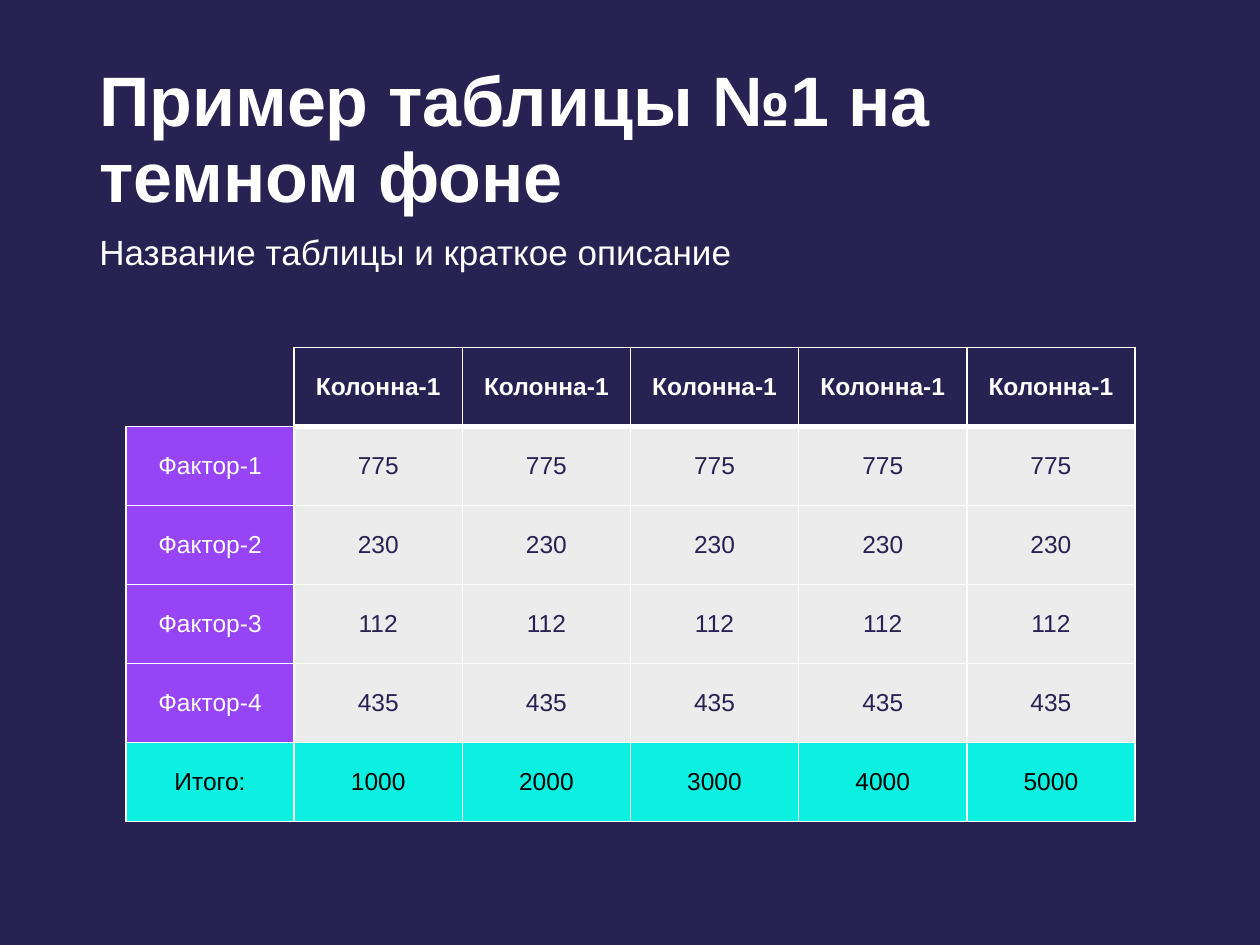
from lxml import etree
from pptx import Presentation
from pptx.dml.color import RGBColor
from pptx.enum.text import MSO_ANCHOR, PP_ALIGN
from pptx.oxml.ns import qn
from pptx.util import Inches, Pt

CENTER = PP_ALIGN.CENTER
MIDDLE = MSO_ANCHOR.MIDDLE
TOP = MSO_ANCHOR.TOP

FONT = "Arial"
NAVY, WHITE, BLACK = "282252", "FFFFFF", "000000"
PURPLE, GRAY, CYAN = "9744F6", "ECECEC", "0BF0E1"

COLUMNS = 5
FACTORS = [("Фактор-1", "775"), ("Фактор-2", "230"),
           ("Фактор-3", "112"), ("Фактор-4", "435")]
TOTALS = ["Итого:", "1000", "2000", "3000", "4000", "5000"]
ROWS = [[""] + ["Колонна-1"] * COLUMNS,
        *([name] + [value] * COLUMNS for name, value in FACTORS),
        TOTALS]


def rgb(color):
    """Turn a hex string into a colour."""
    return RGBColor.from_string(color)


def add_run(p, text, size, color, bold=False):
    """Append a formatted run to a paragraph."""
    r = p.add_run()
    r.text = text
    r.font.name = FONT
    r.font.size = Pt(size)
    r.font.bold = bold
    r.font.color.rgb = rgb(color)


def add_text(s, box, lines, size, bold=False, anchor=TOP, spacing=None):
    """Add a wrapped text box whose lines are parted by line breaks."""
    tf = s.shapes.add_textbox(*map(Inches, box)).text_frame
    tf.word_wrap = True
    tf.vertical_anchor = anchor
    p = tf.paragraphs[0]
    p.line_spacing = spacing
    for i, line in enumerate(lines):
        if i:
            p.add_line_break()
        add_run(p, line, size, WHITE, bold)


def set_borders(cell, widths):
    """Draw white left, right, top and bottom borders; zero means none."""
    tc_pr = cell._tc.get_or_add_tcPr()
    for i, (side, width) in enumerate(zip("LRTB", widths)):
        ln = etree.Element(qn(f"a:ln{side}"), w=str(Pt(width)))
        if width:
            fill = etree.SubElement(ln, qn("a:solidFill"))
            etree.SubElement(fill, qn("a:srgbClr"), val=WHITE)
        else:
            etree.SubElement(ln, qn("a:noFill"))
        tc_pr.insert(i, ln)


def cell_style(row, col):
    """Return fill colour, text colour and border widths for a cell."""
    if row == 0:
        return (NAVY, WHITE, (1, 1, 1, 3)) if col else (None, WHITE, (0, 1, 0, 1))
    widths = (1, 1, 3 if row == 1 and col else 1, 1)
    if row == len(ROWS) - 1:
        return CYAN, BLACK, widths
    return (GRAY, NAVY, widths) if col else (PURPLE, WHITE, widths)


def fill_cell(cell, text, row, col):
    """Style one table cell and write its text."""
    fill, color, widths = cell_style(row, col)
    if fill:
        cell.fill.solid()
        cell.fill.fore_color.rgb = rgb(fill)
    else:
        cell.fill.background()
    set_borders(cell, widths)
    cell.vertical_anchor = MIDDLE
    if text:
        p = cell.text_frame.paragraphs[0]
        p.alignment = CENTER
        add_run(p, text, 14, color, bold=row == 0)


def add_factor_table(s):
    """Add the table of factors with its header and totals."""
    box = map(Inches, (1, 2.76, 8.01, 3.76))
    table = s.shapes.add_table(len(ROWS), COLUMNS + 1, *box).table
    table.horz_banding = False
    for row, texts in enumerate(ROWS):
        for col, text in enumerate(texts):
            fill_cell(table.cell(row, col), text, row, col)


def main():
    """Build and save the slide."""
    prs = Presentation()
    prs.slide_width, prs.slide_height = Inches(10), Inches(7.5)
    s = prs.slides.add_slide(prs.slide_layouts[6])
    s.background.fill.solid()
    s.background.fill.fore_color.rgb = rgb(NAVY)
    add_factor_table(s)
    add_text(s, (0.69, 0.4, 8.62, 1.45), ["Пример таблицы №1 на ", "темном фоне"],
             40, bold=True, anchor=MIDDLE, spacing=0.9)
    add_text(s, (0.69, 1.78, 8.2, 0.44), ["Название таблицы и краткое описание"], 20)
    prs.save("out.pptx")


if __name__ == "__main__":
    main()
